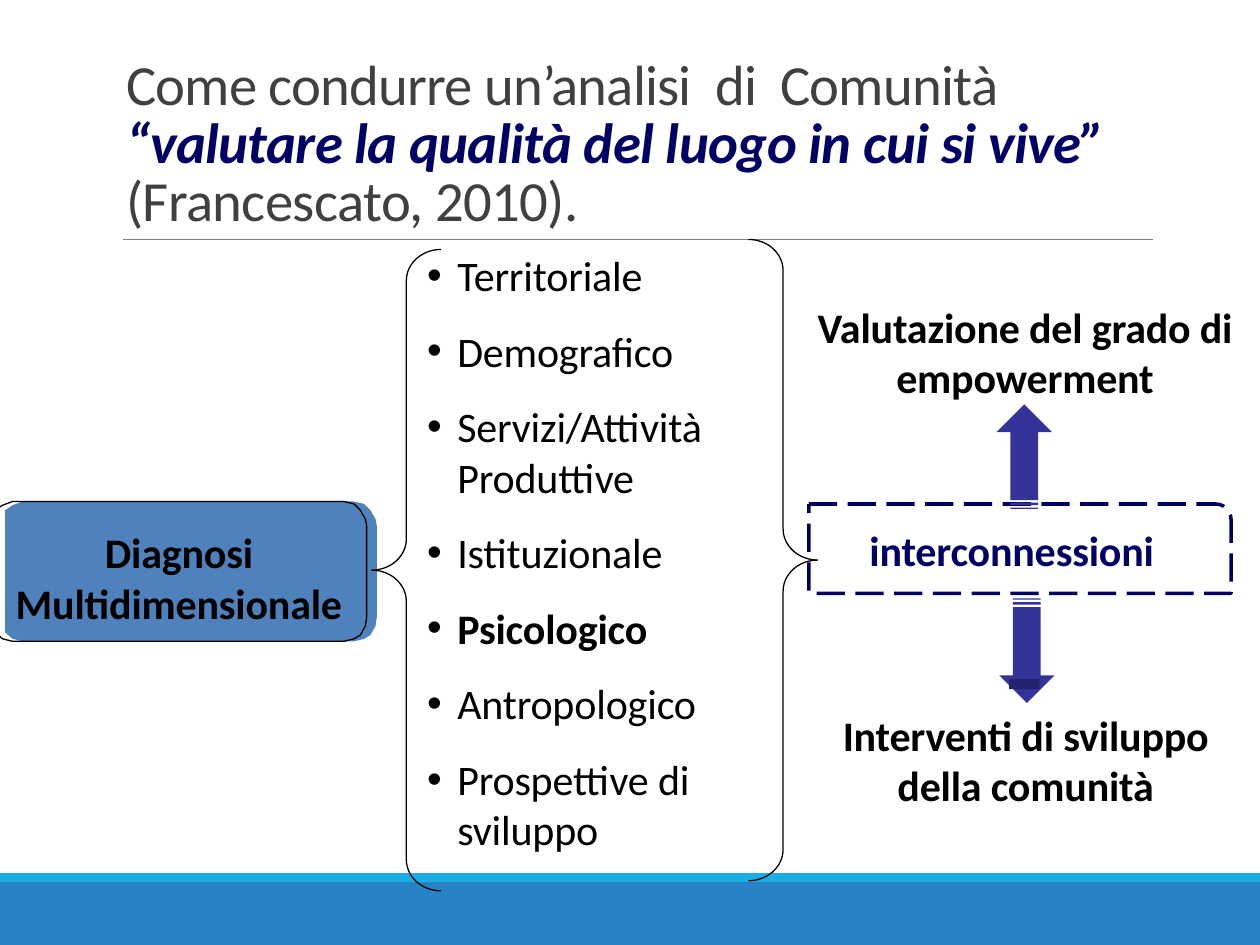
import pptx
import pptx.util
import pptx.dml.color
import pptx.enum.dml
import pptx.enum.shapes
import pptx.enum.text
import pptx.oxml
import pptx.oxml.ns

SHAPE = pptx.enum.shapes.MSO_SHAPE
ALIGN = pptx.enum.text.PP_ALIGN
ANCHOR = pptx.enum.text.MSO_ANCHOR
DASH = pptx.enum.dml.MSO_LINE.LONG_DASH
NAVY, INDIGO, BLACK, GREY = "000066", "333399", "000000", "404040"


def rgb(value):
    return pptx.dml.color.RGBColor.from_string(value)


def sub(parent, tag, **attrs):
    el = pptx.oxml.parse_xml(f"<{tag} {pptx.oxml.ns.nsdecls('a')}/>")
    for name, value in attrs.items():
        el.set(name, value)
    parent.append(el)


class Deck:
    """Style and current slide; lengths are in a grid of 100 columns by 75 rows."""
    font, size = "Calibri", 24

    def __init__(self):
        self.prs = pptx.Presentation()
        self.prs.slide_width = pptx.util.Inches(10)
        self.prs.slide_height = pptx.util.Inches(7.5)
        self.s = self.prs.slides.add_slide(self.prs.slide_layouts[5])

    def col(self, n):
        return round(self.prs.slide_width * n / 100)

    def row(self, n):
        return round(self.prs.slide_height * n / 75)

    def box(self, x, y, w, h):
        return self.col(x), self.row(y), self.col(w), self.row(h)

    def run(self, p, text, color=BLACK, size=None, bold=False, italic=False, spc=-0.1):
        r = p.add_run()
        r.text = text
        f = r.font
        f.name, f.size = self.font, pptx.util.Pt(size or self.size)
        f.bold, f.italic, f.color.rgb = bold, italic, rgb(color)
        r._r.get_or_add_rPr().set("spc", str(round(spc * 100)))

    def paint(self, sp, fill=None, line=None, width=0.75, dash=None):
        sp.shadow.inherit = False
        if fill:
            sp.fill.solid()
            sp.fill.fore_color.rgb = rgb(fill)
        else:
            sp.fill.background()
        if line:
            sp.line.color.rgb = rgb(line)
            sp.line.width = pptx.util.Pt(width)
            sp.line.dash_style = dash
        else:
            sp.line.fill.background()

    def shape(self, kind, x, y, w, h, adj=(), **style):
        sp = self.s.shapes.add_shape(kind, *self.box(x, y, w, h))
        for i, value in enumerate(adj):
            sp.adjustments[i] = value
        self.paint(sp, **style)

    def outline(self, contours, close=True, **style):
        pts = [[(self.col(x), self.row(y)) for x, y in c] for c in contours]
        fb = self.s.shapes.build_freeform(*pts[0][0], scale=1.0)
        for i, contour in enumerate(pts):
            if i:
                fb.move_to(*contour[0])
            fb.add_line_segments(contour[1:], close=close)
        self.paint(fb.convert_to_shape(), **style)

    def rule(self, x1, x2, y, color):
        c = self.s.shapes.add_connector(
            pptx.enum.shapes.MSO_CONNECTOR.STRAIGHT,
            self.col(x1), self.row(y), self.col(x2), self.row(y))
        c.line.color.rgb = rgb(color)
        c.line.width = pptx.util.Pt(0.5)
        sub(c._element.spPr, "a:effectLst")

    def frame(self, x, y, w, h):
        tf = self.s.shapes.add_textbox(*self.box(x, y, w, h)).text_frame
        tf.word_wrap = True
        tf.margin_left = tf.margin_right = tf.margin_top = tf.margin_bottom = 0
        return tf

    def label(self, text, x, y, w, h, color=BLACK):
        p = self.frame(x, y, w, h).paragraphs[0]
        p.alignment = ALIGN.CENTER
        self.run(p, text, color, bold=True)

    def bullets(self, items, bold_item, x, y, w, h):
        tf = self.frame(x, y, w, h)
        for i, text in enumerate(items):
            p = tf.add_paragraph() if i else tf.paragraphs[0]
            p.space_before = pptx.util.Pt(14.4 if i else 0)
            pPr = p._p.get_or_add_pPr()
            pPr.set("marL", str(self.col(2.5)))
            pPr.set("indent", str(-self.col(2.4)))
            sub(pPr, "a:buFont", typeface="Arial")
            sub(pPr, "a:buChar", char="•")
            self.run(p, text, bold=text == bold_item)

    def title(self, x, y, w, h):
        sp = self.s.shapes.title
        sp.left, sp.top, sp.width, sp.height = self.box(x, y, w, h)
        tf = sp.text_frame
        tf.word_wrap, tf.vertical_anchor = True, ANCHOR.BOTTOM
        tf.auto_size = pptx.enum.text.MSO_AUTO_SIZE.NONE
        p = tf.paragraphs[0]
        p.alignment, p.line_spacing = ALIGN.LEFT, 0.85
        return p

    def striped_arrow(self, center, tip, way):
        """Block arrow with two tail stripes; way is 1 for up, -1 for down."""
        def bar(a, b):
            return [(center + dx, tip + way * d)
                    for dx, d in ((-1.1, a), (1.1, a), (1.1, b), (-1.1, b))]
        head = [(center, tip), (center + 2.2, tip + way * 2.2), (center - 2.2, tip + way * 2.2)]
        self.outline([head, bar(2.2, 7.6), bar(7.8, 8), bar(8.2, 8.3)], fill=INDIGO)


def main():
    d = Deck()

    # Footer bands and title rule
    d.shape(SHAPE.RECTANGLE, 0, 70, 100, 5, fill="2683C6")
    d.shape(SHAPE.RECTANGLE, 0, 69.3, 100, 0.7, fill="1CADE4")
    d.rule(9.8, 91.5, 19, "808080")

    # Title
    p = d.title(9, 3.1, 82.5, 15.9)
    d.run(p, "Come condurre un’analisi  di  Comunità ", GREY, 32.4, spc=-0.45)
    p.add_line_break()
    d.run(p, "“valutare la qualità del luogo in cui si vive” ", NAVY, 32.4, True, True, -0.35)
    d.run(p, "(Francescato, 2010).", GREY, 32.4, spc=-0.35)

    # Diagnosis box: fill, and the same contour shifted left as an open line
    edge = [(0.4, 40.5), (1, 40.1), (1.8, 39.8), (28.1, 39.8), (28.9, 40), (29.4, 40.5),
            (29.8, 41.2), (29.9, 41.7), (29.9, 49), (29.8, 49.7), (29.4, 50.4),
            (28.9, 50.7), (28.1, 50.9), (1.8, 50.9), (1, 50.7), (0.4, 50.2)]
    d.outline([edge], fill="4F81BC")
    d.outline([[(x - 0.8, y) for x, y in edge]], close=False, line=BLACK)
    d.label("Diagnosi Multidimensionale", 0.8, 41.8, 26.8, 7.6)

    # Dimensions between braces
    d.bullets(["Territoriale", "Demografico", "Servizi/Attività Produttive", "Istituzionale",
               "Psicologico", "Antropologico", "Prospettive di sviluppo"],
              "Psicologico", 33.8, 19.8, 30.7, 48.1)
    d.shape(SHAPE.LEFT_BRACE, 29.5, 19.8, 5.5, 50.9, (0.45, 0.5), line=BLACK)
    d.shape(SHAPE.RIGHT_BRACE, 59.4, 19, 5.5, 50.9, (0.45, 0.5), line=BLACK)

    # Interconnections and their outcomes
    d.label("Valutazione del grado di empowerment", 64, 23.9, 34.7, 7.6)
    d.label("Interventi di sviluppo della comunità", 66, 56.3, 30.8, 7.6)
    d.shape(SHAPE.ROUND_1_RECTANGLE, 64.2, 40, 33.5, 7.1, (0.17,),
            line=NAVY, width=2, dash=DASH)
    d.label("interconnessioni", 68.3, 41.6, 24, 3.6, NAVY)
    d.striped_arrow(81.3, 32.1, 1)
    d.striped_arrow(81.5, 55.8, -1)
    for y, h in ((53.9, 0.4), (54.2, 0.5)):
        d.shape(SHAPE.RECTANGLE, 80.1, y, 2.4, h, fill="22226E")

    d.prs.save("out.pptx")


if __name__ == "__main__":
    main()
